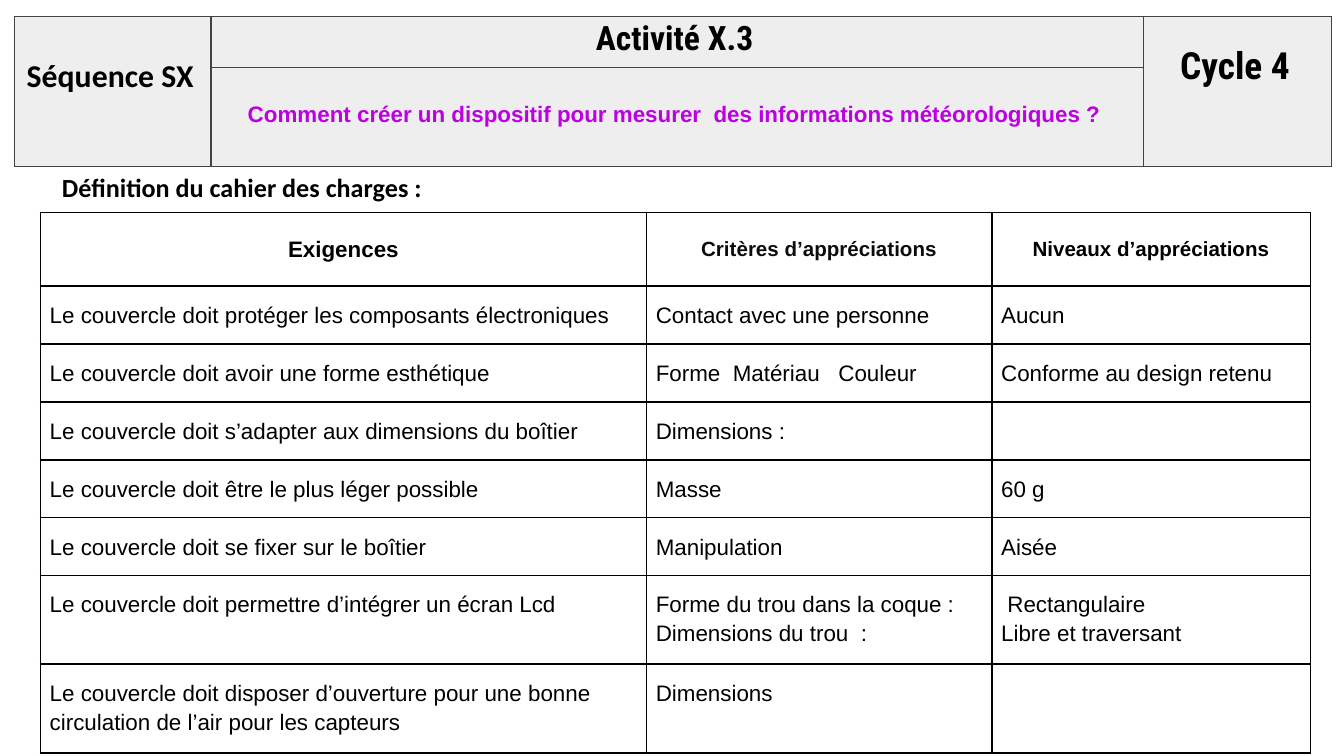
from lxml import etree
from pptx import Presentation
from pptx.dml.color import RGBColor
from pptx.enum.text import MSO_ANCHOR, MSO_AUTO_SIZE, PP_ALIGN
from pptx.oxml.ns import qn
from pptx.util import Inches, Pt

# Content
HEADING = "Définition du cahier des charges :"
SEQUENCE = "Séquence SX"
ACTIVITY = "Activité X.3"
QUESTION = "Comment créer un dispositif pour mesurer  des informations météorologiques ?"
CYCLE = "Cycle 4"
COLUMN_TITLES = ["Exigences", "Critères d’appréciations", "Niveaux d’appréciations"]
REQUIREMENTS = [
    ("Le couvercle doit protéger les composants électroniques", "Contact avec une personne", "Aucun"),
    ("Le couvercle doit avoir une forme esthétique", "Forme  Matériau   Couleur", "Conforme au design retenu"),
    ("Le couvercle doit s’adapter aux dimensions du boîtier", "Dimensions :", ""),
    ("Le couvercle doit être le plus léger possible", "Masse", "60 g"),
    ("Le couvercle doit se fixer sur le boîtier", "Manipulation", "Aisée"),
    ("Le couvercle doit permettre d’intégrer un écran Lcd",
     "Forme du trou dans la coque : Dimensions du trou  :",
     " Rectangulaire\nLibre et traversant"),
    ("Le couvercle doit disposer d’ouverture pour une bonne circulation de l’air pour les capteurs",
     "Dimensions", ""),
]

# Formats
COLORS = {"text": "000000", "criteria": "0C0C0C", "question": "BC00E2",
          "banner": "EEEEEE", "banner_line": "434343", "grid_line": "000000"}
BANNER_MARGINS = (0.02, 0.02, 0.06, 0.06)
GRID_MARGINS = (0.07, 0.1, 0.07, 0.1)
CENTERED = {"alignment": PP_ALIGN.CENTER}
HEADER = {"alignment": PP_ALIGN.CENTER, "space_after": Pt(12)}
BODY = {"alignment": PP_ALIGN.LEFT, "line_spacing": 1.15}


def write(frame, text, paragraph_format, size, font="Arial", color="text", bold=True):
    frame.text = text
    font_format = {"name": font, "size": Pt(size), "bold": bold}
    for paragraph in frame.paragraphs:
        for name, value in paragraph_format.items():
            setattr(paragraph, name, value)
        for name, value in font_format.items():
            setattr(paragraph.font, name, value)
        paragraph.font.color.rgb = RGBColor.from_string(COLORS[color])


def set_margins(target, margins):
    for side, inches in zip(("left", "top", "right", "bottom"), margins):
        setattr(target, f"margin_{side}", Inches(inches))


def add_grid(slide, left, top, widths, heights, margins, line, line_width, fill=None):
    """Add a plain table with one border style and one fill."""
    table = slide.shapes.add_table(
        len(heights), len(widths), Inches(left), Inches(top),
        Inches(sum(widths)), Inches(sum(heights))).table
    table.first_row = table.horz_banding = False
    for column, width in zip(table.columns, widths):
        column.width = Inches(width)
    for row, height in zip(table.rows, heights):
        row.height = Inches(height)
    for cell in table.iter_cells():
        set_margins(cell, margins)
        properties = cell._tc.get_or_add_tcPr()
        for tag in ("a:lnL", "a:lnR", "a:lnT", "a:lnB"):
            border = etree.SubElement(properties, qn(tag), w=str(Pt(line_width)))
            solid = etree.SubElement(border, qn("a:solidFill"))
            etree.SubElement(solid, qn("a:srgbClr"), val=COLORS[line])
        if fill:
            cell.fill.solid()
            cell.fill.fore_color.rgb = RGBColor.from_string(COLORS[fill])
        else:
            cell.fill.background()
    return table


# Widescreen 16:9 slide
prs = Presentation()
prs.slide_width = Inches(10)
prs.slide_height = prs.slide_width * 9 // 16
slide = prs.slides.add_slide(prs.slide_layouts[5])

# Heading
heading = slide.shapes.title
for name, inches in {"left": 0.11, "top": 1.14, "width": 7.01, "height": 0.44}.items():
    setattr(heading, name, Inches(inches))
frame = heading.text_frame
frame.word_wrap = True
frame.auto_size = MSO_AUTO_SIZE.SHAPE_TO_FIT_TEXT
frame.vertical_anchor = MSO_ANCHOR.TOP
set_margins(frame, (0.35, 0.1, 0.1, 0.1))
write(frame, HEADING, BODY, 14, "Calibri")

# Requirements table
row_heights = [0.55] + [0.43] * 5 + [0.66] * 2
requirements = add_grid(slide, 0.3, 1.58, [4.51, 2.57, 2.37], row_heights,
                        GRID_MARGINS, "grid_line", 1)
header_styles = [(12, "text"), (11, "criteria"), (11, "text")]
for col, (title, (size, color)) in enumerate(zip(COLUMN_TITLES, header_styles)):
    cell = requirements.cell(0, col)
    cell.vertical_anchor = MSO_ANCHOR.MIDDLE
    write(cell.text_frame, title, HEADER, size, color=color)
for row, texts in enumerate(REQUIREMENTS, 1):
    for col, text in enumerate(texts):
        write(requirements.cell(row, col).text_frame, text, BODY, 12, bold=False)

# Banner: row, column, text, size, font, colour, bottom margin
banner = add_grid(slide, 0.11, 0.12, [1.46, 6.94, 1.4], [0.38, 0.74],
                  BANNER_MARGINS, "banner_line", 0.75, "banner")
for col in (0, 2):
    banner.cell(0, col).merge(banner.cell(1, col))
for row, col, text, size, font, color, bottom in [
    (0, 0, SEQUENCE, 17, "Calibri", "text", 0.24),
    (0, 1, ACTIVITY, 18, "Roboto Condensed", "text", 0.06),
    (0, 2, CYCLE, 20, "Roboto Condensed", "text", 0.38),
    (1, 1, QUESTION, 12, "Arial", "question", 0.06),
]:
    cell = banner.cell(row, col)
    cell.vertical_anchor = MSO_ANCHOR.MIDDLE
    cell.margin_bottom = Inches(bottom)
    write(cell.text_frame, text, CENTERED, size, font, color)

prs.save("out.pptx")
